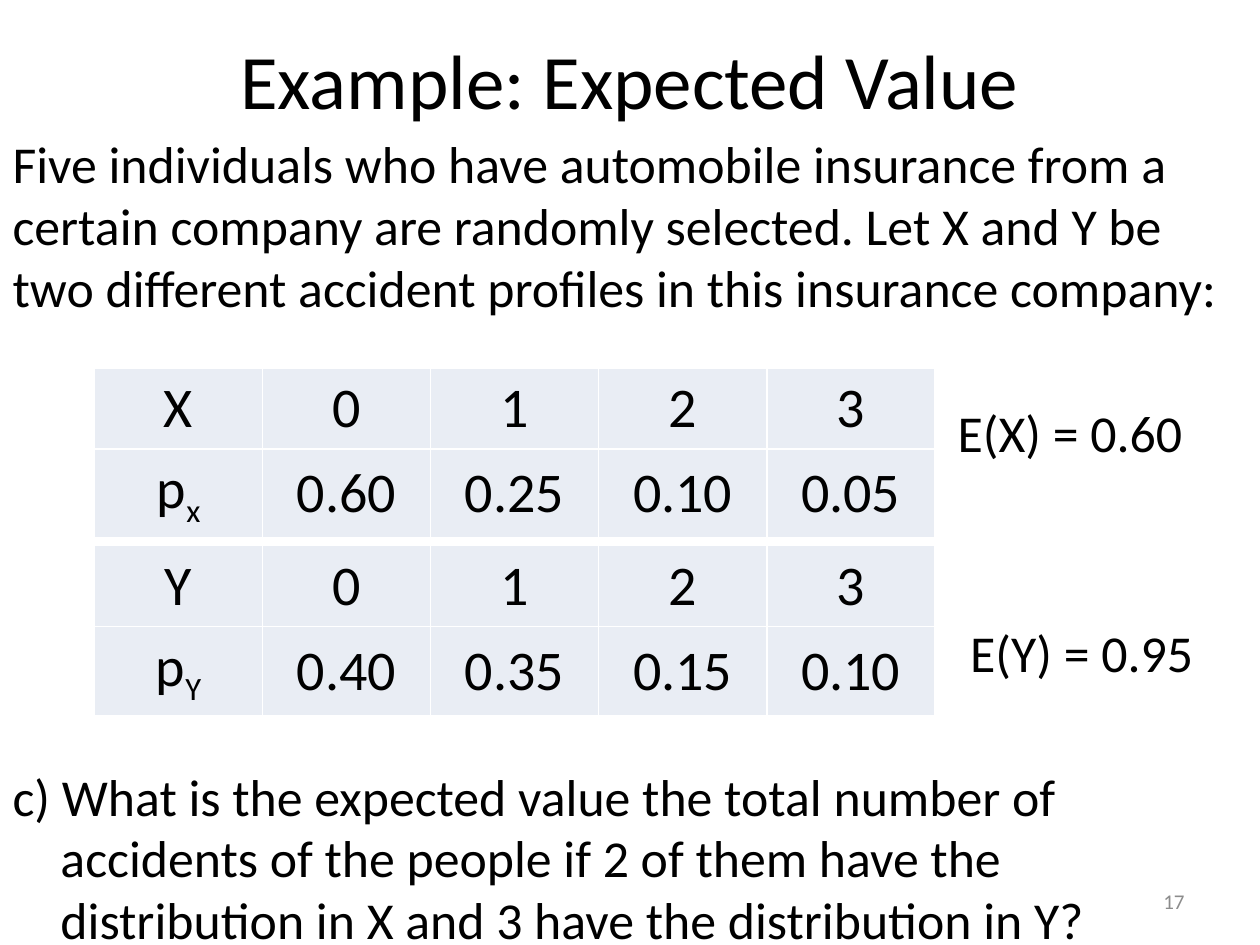
from pptx import Presentation
from pptx.dml.color import RGBColor
from pptx.enum.text import MSO_ANCHOR as Anchor, MSO_AUTO_SIZE as AutoSize, PP_ALIGN as Align
from pptx.oxml.ns import qn
from pptx.util import Inches, Pt

FONT = "Calibri"
BLACK, GREY, CELL = "000000", "8C8C8C", "E9EDF4"

TITLE = "Example: Expected Value"
# text, space before (pt), left margin and first-line indent (inches)
BODY = [
    ("Five individuals who have automobile insurance from a certain company are "
     "randomly selected. Let X and Y be two different accident profiles in this "
     "insurance company:", 2, 0, 0),
    ("E(X) = 0.60", 48, 7.5, 0),
    ("E(Y) = 0.95", 90, 7.6, 0),
    ("c) What is the expected value the total number of accidents of the people if "
     "2 of them have the distribution in X and 3 have the distribution in Y?",
     47, 0.38, -0.38),
]
# variable, subscript, probabilities of 0, 1, 2, 3 accidents, top
PROFILES = [
    ("X", "x", ["0.60", "0.25", "0.10", "0.05"], 2.92),
    ("Y", "Y", ["0.40", "0.35", "0.15", "0.10"], 4.33),
]
PAGE_NUMBER = "17"
TABLE_LEFT, TABLE_WIDTH, ROW_HEIGHTS = 0.75, 6.67, (0.64, 0.7)


def rgb(color):
    return RGBColor.from_string(color)


def add_run(paragraph, text, size, color=BLACK):
    run = paragraph.add_run()
    run.text = text
    style = {"name": FONT, "size": Pt(size)}
    for key, value in style.items():
        setattr(run.font, key, value)
    run.font.color.rgb = rgb(color)
    return run


def place(shape, *box):
    for key, value in zip(("left", "top", "width", "height"), box):
        setattr(shape, key, Inches(value))


def add_title(slide):
    title = slide.shapes.title
    place(title, 0.5, 0, 9, 1.25)
    frame = title.text_frame
    frame.vertical_anchor = Anchor.MIDDLE
    frame.paragraphs[0].alignment = Align.CENTER
    add_run(frame.paragraphs[0], TITLE, 44)


def add_body(slide):
    body = slide.placeholders[1]
    place(body, 0, 1, 10, 6.5)
    frame = body.text_frame
    frame.auto_size = AutoSize.NONE
    for i, (text, before, margin, indent) in enumerate(BODY):
        paragraph = frame.add_paragraph() if i else frame.paragraphs[0]
        paragraph.space_before = Pt(before)
        paragraph.line_spacing = Pt(35.3)
        props = paragraph._p.get_or_add_pPr()
        props.set("marL", str(Inches(margin)))
        props.set("indent", str(Inches(indent)))
        props.append(props.makeelement(qn("a:buNone"), {}))
        add_run(paragraph, text, 29.6)


def add_profile(slide, variable, subscript, probabilities, top):
    rows = [[variable, *map(str, range(len(probabilities)))], ["p", *probabilities]]
    table = slide.shapes.add_table(
        len(rows), len(rows[0]), Inches(TABLE_LEFT), Inches(top),
        Inches(TABLE_WIDTH), Inches(sum(ROW_HEIGHTS))).table
    table.first_row = table.horz_banding = False
    for r, values in enumerate(rows):
        table.rows[r].height = Inches(ROW_HEIGHTS[r])
        for c, value in enumerate(values):
            cell = table.cell(r, c)
            cell.fill.solid()
            cell.fill.fore_color.rgb = rgb(CELL)
            cell.vertical_anchor = Anchor.MIDDLE
            paragraph = cell.text_frame.paragraphs[0]
            paragraph.alignment = Align.CENTER
            add_run(paragraph, value, 32)
    label = table.cell(1, 0).text_frame.paragraphs[0]
    lowered = add_run(label, subscript, 32)
    lowered.font._element.set("baseline", "-25000")


def add_page_number(slide):
    box = slide.shapes.add_textbox(*map(Inches, (7.17, 6.95, 2.33, 0.4)))
    frame = box.text_frame
    frame.word_wrap = True
    frame.vertical_anchor = Anchor.MIDDLE
    frame.paragraphs[0].alignment = Align.RIGHT
    add_run(frame.paragraphs[0], PAGE_NUMBER, 12, GREY)


def main():
    deck = Presentation()
    deck.slide_width, deck.slide_height = Inches(10), Inches(7.5)
    slide = deck.slides.add_slide(deck.slide_layouts[1])
    add_title(slide)
    add_body(slide)
    for profile in PROFILES:
        add_profile(slide, *profile)
    add_page_number(slide)
    deck.save("out.pptx")


if __name__ == "__main__":
    main()
